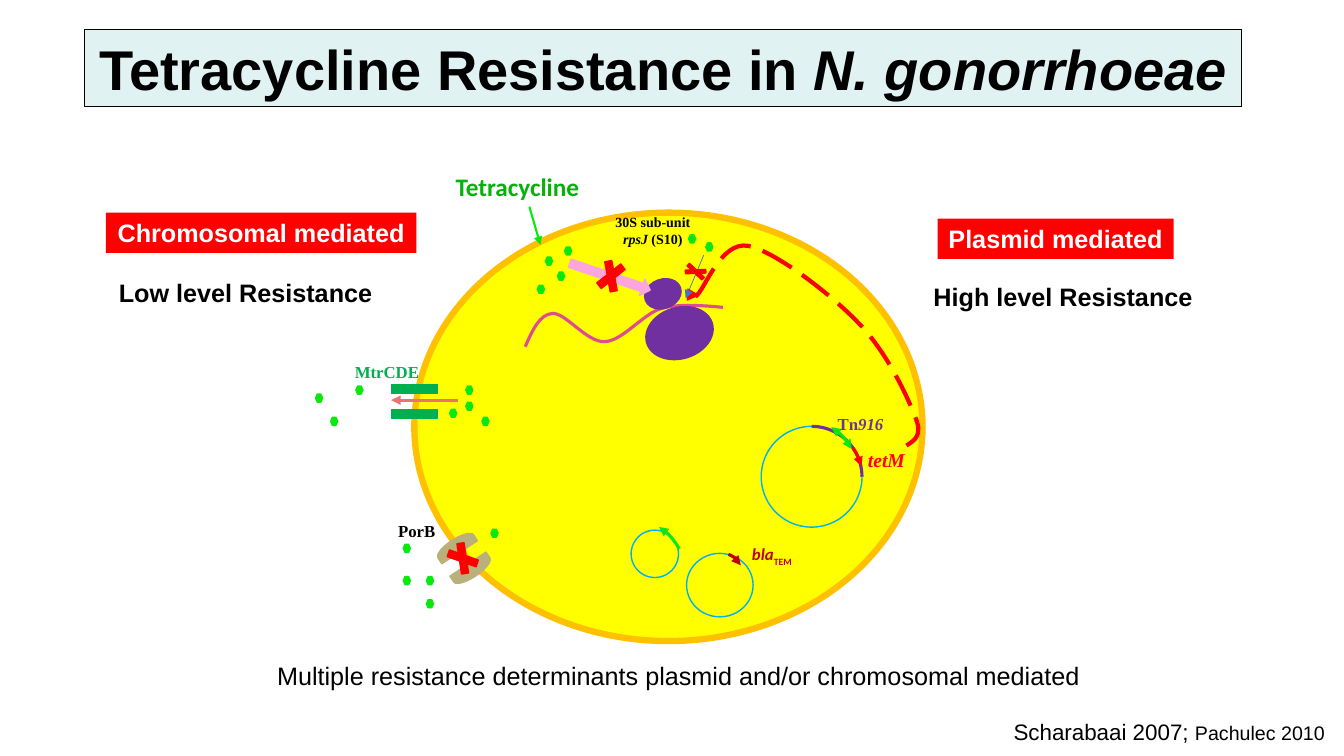
from lxml import etree
from pptx import Presentation
from pptx.dml.color import RGBColor
from pptx.enum import dml, shapes, text
from pptx.oxml import ns
from pptx.util import Inches, Pt

COLOURS = {
    "pale": "E1F2F3", "black": "000000", "white": "FFFFFF", "yellow": "FFFF00",
    "amber": "FFC000", "red": "FF0000", "dark red": "C00000", "green": "00B050",
    "drug": "09E90E", "drug label": "07B10B", "sky": "00B0F0", "blue": "4472C4",
    "purple": "7030A0", "salmon": "EA7272", "rose": "DE4E8F", "pink": "FBA7DD",
    "khaki": "B9B07B",
}
RGB = {name: RGBColor.from_string(value) for name, value in COLOURS.items()}
KIND = shapes.MSO_SHAPE
CENTER, RIGHT = text.PP_ALIGN.CENTER, text.PP_ALIGN.RIGHT

presentation = Presentation()
presentation.slide_width, presentation.slide_height = Inches(13.33), Inches(7.5)
slide = presentation.slides.add_slide(presentation.slide_layouts[5])


def draw(kind, box, fill, line, width=1, rotation=0):
    shape = slide.shapes.add_shape(kind, *map(Inches, box))
    shape.shadow.inherit = False
    shape.rotation = rotation
    if fill:
        shape.fill.solid()
        shape.fill.fore_color.rgb = RGB[fill]
    else:
        shape.fill.background()
    if line:
        shape.line.color.rgb = RGB[line]
        shape.line.width = Pt(width)
    else:
        shape.line.fill.background()
    return shape


def write(shape, paragraphs, size, font, colour, bold=True, align=None, wrap=False):
    frame = shape.text_frame
    frame.word_wrap = wrap
    for index, runs in enumerate(paragraphs):
        paragraph = frame.add_paragraph() if index else frame.paragraphs[0]
        paragraph.alignment = align
        for words, changes in runs:
            run = paragraph.add_run()
            run.text = words
            run.font.color.rgb = RGB[colour]
            style = {"size": Pt(size), "name": font, "bold": bold, **changes}
            for name, value in style.items():
                setattr(run.font, name, value)
    return frame


title = slide.shapes.title
title.left, title.top, title.width, title.height = map(Inches, (0.84, 0.29, 11.47, 0.77))
title.fill.solid()
title.fill.fore_color.rgb = RGB["pale"]
title.line.color.rgb = RGB["black"]
title.line.width = Pt(0.75)
title_frame = write(title, [[("Tetracycline Resistance in ", {}), ("N. gonorrhoeae", {"italic": True})]],
                    40, "Arial", "black", align=CENTER)
title_frame.auto_size = text.MSO_AUTO_SIZE.NONE
title_frame.vertical_anchor = text.MSO_ANCHOR.MIDDLE

draw(KIND.OVAL, (4.11, 2.11, 5.04, 4.25), "yellow", "amber", 4.5)

for words, box in [("Chromosomal mediated", (1.05, 2.11, 3.08, 0.4)),
                   ("Plasmid mediated", (9.3, 2.17, 2.34, 0.4))]:
    write(draw(KIND.RECTANGLE, box, "red", None), [[(words, {})]], 18, "Arial", "white", align=CENTER)

for plasmid in [(7.55, 4.23, 1, 1), (6.81, 5.49, 0.66, 0.63), (6.26, 5.26, 0.47, 0.47)]:
    draw(KIND.OVAL, plasmid, "yellow", "sky")

for top in (3.81, 4.06):
    draw(KIND.RECTANGLE, (3.88, top, 0.46, 0.09), "green", "green", 0.5)

arrows = []
for box, colour, rotation, angles, ends in [
    ((7.55, 4.23, 1, 1), "purple", 0, (), ()),
    ((7.61, 4.23, 0.96, 1.17), "red", 0, (189.32, 202.41), ("tailEnd",)),
    ((6.88, 5.48, 0.5, 0.5), "dark red", 0, (175.49, 198.57), ("tailEnd",)),
    ((7.57, 4.16, 0.96, 1.17), "drug", 346.6, (182.76, 202.41), ("headEnd", "tailEnd")),
    ((5.86, 5.15, 0.96, 1.17), "drug", 346.6, (182.76, 202.41), ("headEnd",)),
]:
    arc = draw(KIND.ARC, box, None, colour, 2.25, rotation)
    for index, angle in enumerate(angles):
        arc.adjustments[index] = angle
    arrows.append((arc, ends))

MRNA = [(5.21, 3.44), (5.28, 3.28), (5.35, 3.12), (5.48, 3.11), (5.61, 3.1), (5.82, 3.4), (6, 3.39),
        (6.18, 3.38), (6.37, 3.12), (6.56, 3.06), (6.75, 3), (7.17, 3.05), (7.17, 3.05)]
TETM_ROUTE = [(8.99, 4.42), (9.07, 4.37), (9.16, 4.32), (9.07, 4.12), (8.99, 3.91), (8.78, 3.47),
              (8.5, 3.19), (8.23, 2.91), (7.68, 2.49), (7.42, 2.44), (7.16, 2.39), (7, 2.84),
              (6.92, 2.92), (6.84, 3), (6.89, 2.96), (6.94, 2.93)]
for points, colour, width, dash, ends in [
    (MRNA, "rose", 2.25, None, ()),
    (TETM_ROUTE, "red", 3, dml.MSO_LINE.LONG_DASH, ("tailEnd",)),
]:
    points = [(Inches(x), Inches(y)) for x, y in points]
    builder = slide.shapes.build_freeform(*points[0])
    builder.add_line_segments(points[1:], close=False)
    curve = builder.convert_to_shape()
    segments = list(curve._element.iter(ns.qn("a:lnTo")))
    for start in range(0, len(segments), 3):
        bezier = etree.Element(ns.qn("a:cubicBezTo"))
        segments[start].addprevious(bezier)
        for segment in segments[start:start + 3]:
            bezier.append(segment[0])
            segment.getparent().remove(segment)
    curve.shadow.inherit = False
    curve.fill.background()
    curve.line.color.rgb = RGB[colour]
    curve.line.width = Pt(width)
    curve.line.dash_style = dash
    arrows.append((curve, ends))

for start, end, colour, width in [
    ((4.54, 3.97), (3.88, 3.97), "salmon", 2.25),
    ((6.98, 2.53), (6.8, 2.96), "blue", 0.5),
    ((5.25, 2.05), (5.36, 2.43), "drug", 1.5),
]:
    connector = slide.shapes.add_connector(shapes.MSO_CONNECTOR.STRAIGHT, *map(Inches, start + end))
    connector.line.color.rgb = RGB[colour]
    connector.line.width = Pt(width)
    etree.SubElement(connector._element.spPr, ns.qn("a:effectLst"))
    arrows.append((connector, ("tailEnd",)))

for shape, ends in arrows:
    for end in ends:
        etree.SubElement(shape.line._get_or_add_ln(), ns.qn("a:" + end), type="triangle")

for kind, box, colour, rotation in [
    (KIND.OVAL, (6.39, 2.77, 0.37, 0.29), "purple", 339.5),
    (KIND.OVAL, (6.4, 3.05, 0.68, 0.51), "purple", 343),
    (KIND.FLOWCHART_DELAY, (4.45, 5.21, 0.14, 0.42), "khaki", 237.2),
    (KIND.FLOWCHART_DELAY, (4.61, 5.44, 0.14, 0.43), "khaki", 56.2),
    (KIND.RIGHT_ARROW, (5.63, 2.66, 0.84, 0.17), "pink", 18.5),
    (KIND.MATH_MULTIPLY, (4.34, 5.39, 0.5, 0.3), "red", 50.4),
    (KIND.MATH_MULTIPLY, (6.72, 2.62, 0.36, 0.15), "red", 20.9),
    (KIND.MATH_MULTIPLY, (5.81, 2.59, 0.5, 0.3), "red", 290.7),
]:
    draw(kind, box, colour, colour, rotation=rotation)

for left, top in [
    (3.28, 4.14), (3.53, 3.83), (4.62, 3.83), (3.13, 3.91), (4.46, 4.06), (4.78, 4.14), (4.62, 3.99),
    (4, 5.72), (4.23, 5.72), (4, 5.4), (4.23, 5.95), (4.87, 5.25),
    (5.6, 2.45), (5.41, 2.55), (5.33, 2.83), (5.53, 2.7), (6.83, 2.33), (7, 2.41),
]:
    draw(KIND.HEXAGON, (left, top, 0.07, 0.08), "drug", "drug")

ITALIC = {"italic": True}
SERIF = "Times New Roman"
for box, paragraphs, size, font, colour, bold, align, wrap in [
    ((8.51, 4.39, 0.57, 0.34), [[("tetM", ITALIC)]], 14, SERIF, "red", True, None, False),
    ((8.21, 4.06, 0.66, 0.3), [[("Tn", {}), ("916", ITALIC)]], 12, SERIF, "purple", True, None, False),
    ((7.36, 5.35, 0.63, 0.3), [[("bla", ITALIC), ("TEM", {})]], 12, "Calibri", "dark red", True, None, False),
    ((3.42, 3.54, 0.85, 0.3), [[("MtrCDE", {})]], 12, SERIF, "green", True, None, False),
    ((3.85, 5.12, 0.58, 0.3), [[("PorB", {})]], 12, SERIF, "black", True, None, False),
    ((6, 2.07, 0.95, 0.44), [[("30S sub-unit", {})], [("rpsJ", ITALIC), (" (S10)", {})]],
     10, SERIF, "black", True, CENTER, False),
    ((9.16, 2.74, 2.98, 0.4), [[("High level Resistance", {})]], 18, "Arial", "black", True, None, True),
    ((1.08, 2.7, 3.02, 0.4), [[("Low level Resistance", {})]], 18, "Arial", "black", True, None, True),
    ((9.92, 7.08, 3.32, 0.57), [[("Scharabaai 2007; ", {}), ("Pachulec 2010", {"size": Pt(14)})]],
     16, "Arial", "black", False, RIGHT, False),
    ((2.65, 6.5, 8.9, 0.4), [[("Multiple resistance determinants plasmid and/or chromosomal mediated", {})]],
     18, "Arial", "black", False, None, True),
    ((4.42, 1.65, 1.66, 0.4), [[("Tetracycline", {})]], 18, "Calibri", "drug label", True, None, False),
]:
    label = slide.shapes.add_textbox(*map(Inches, box))
    frame = write(label, paragraphs, size, font, colour, bold, align, wrap)
    frame.auto_size = text.MSO_AUTO_SIZE.SHAPE_TO_FIT_TEXT
    for run in frame.paragraphs[0].runs:
        if run.text == "TEM":
            run._r.get_or_add_rPr().set("baseline", "-25000")

presentation.save("out.pptx")
